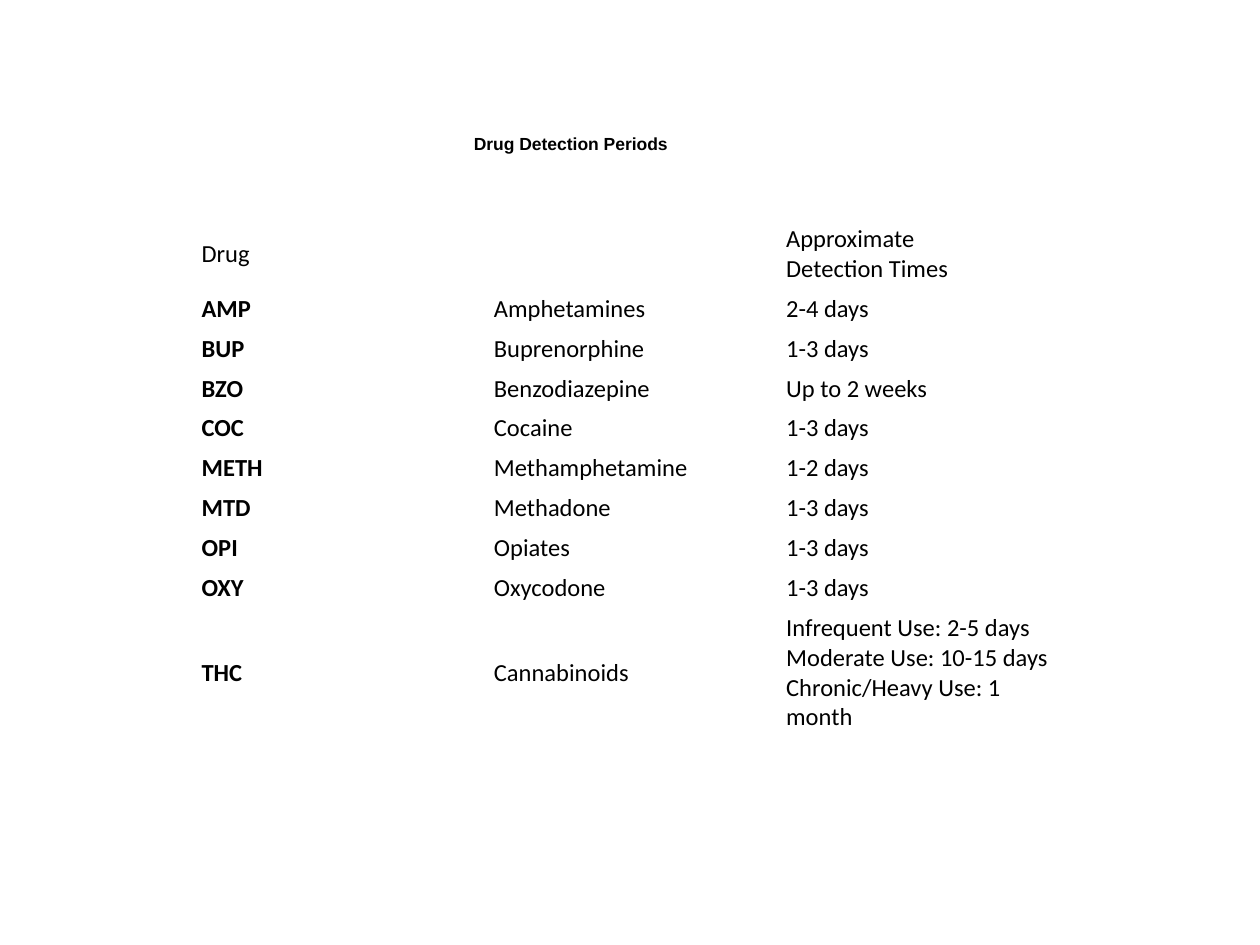
import pptx
import pptx.util
import pptx.dml.color
import pptx.enum.text

Inches, Pt = pptx.util.Inches, pptx.util.Pt
ANCHOR = pptx.enum.text.MSO_ANCHOR
ALIGN = pptx.enum.text.PP_ALIGN
BLACK = pptx.dml.color.RGBColor(0x00, 0x00, 0x00)

SLIDE_W, SLIDE_H = 10, 7.5
COL_W = 2.32
HEAD_H, ROW_H, LAST_H = 0.54, 0.31, 1.01

HEADER = ("Drug", "", "Approximate\nDetection Times")
DRUGS = [
    ("AMP", "Amphetamines", "2-4 days"),
    ("BUP", "Buprenorphine", "1-3 days"),
    ("BZO", "Benzodiazepine", "Up to 2 weeks"),
    ("COC", "Cocaine", "1-3 days"),
    ("METH", "Methamphetamine", "1-2 days"),
    ("MTD", "Methadone", "1-3 days"),
    ("OPI", "Opiates", "1-3 days"),
    ("OXY", "Oxycodone", "1-3 days"),
    ("THC", "Cannabinoids",
     "Infrequent Use: 2-5 days\nModerate Use: 10-15 days\n"
     "Chronic/Heavy Use: 1 month"),
]


def write(p, text, font, size, bold):
    """Fill one paragraph, with a line break at each newline."""
    for i, line in enumerate(text.split("\n")):
        if i:
            p.add_line_break()
        p.add_run().text = line
    p.font.name, p.font.size, p.font.bold = font, Pt(size), bold
    p.font.color.rgb = BLACK


def add_title(s, text):
    box = s.shapes.add_textbox(Inches(0.67), Inches(0.86),
                               Inches(0.75 * SLIDE_W), Inches(0.68))
    tf = box.text_frame
    tf.word_wrap = True
    tf.vertical_anchor = ANCHOR.TOP
    tf.margin_left, tf.margin_top = Inches(0.22), Inches(0.22)
    tf.margin_right = tf.margin_bottom = 0
    p = tf.paragraphs[0]
    p.alignment = ALIGN.CENTER
    write(p, text, "Arial", 10, True)


def fill_cell(cell, text, bold):
    cell.fill.background()
    cell.vertical_anchor = ANCHOR.MIDDLE
    cell.margin_left = cell.margin_right = Inches(0.08)
    cell.margin_top = cell.margin_bottom = Inches(0.04)
    write(cell.text_frame.paragraphs[0], text, "Calibri", 14, bold)


def add_drug_table(s):
    rows = [HEADER] + DRUGS
    heights = [HEAD_H] + [ROW_H] * (len(DRUGS) - 1) + [LAST_H]
    width = COL_W * len(HEADER)
    table = s.shapes.add_table(
        len(rows), len(HEADER), Inches((SLIDE_W - width) / 2), Inches(1.74),
        Inches(width), Inches(sum(heights))).table
    table.first_row = table.horz_banding = False
    for col in table.columns:
        col.width = Inches(COL_W)
    for r, (row, height) in enumerate(zip(rows, heights)):
        table.rows[r].height = Inches(height)
        for c, text in enumerate(row):
            fill_cell(table.cell(r, c), text, bold=r > 0 and c == 0)
    # The drug heading covers both code and name
    table.cell(0, 0).merge(table.cell(0, 1))


def main():
    prs = pptx.Presentation()
    prs.slide_width, prs.slide_height = Inches(SLIDE_W), Inches(SLIDE_H)
    s = prs.slides.add_slide(prs.slide_layouts[6])
    add_drug_table(s)
    add_title(s, "Drug Detection Periods")
    prs.save("out.pptx")


if __name__ == "__main__":
    main()
